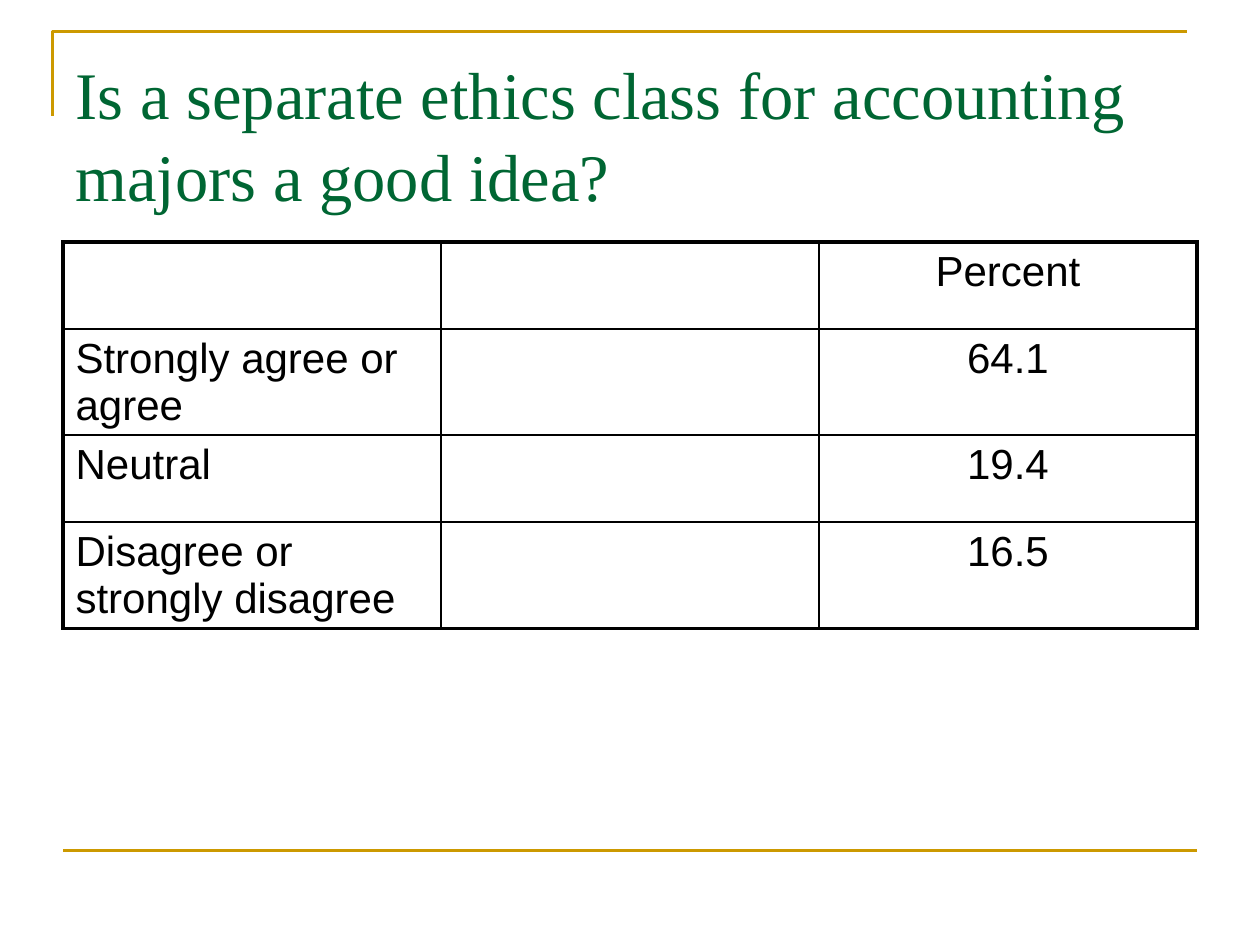
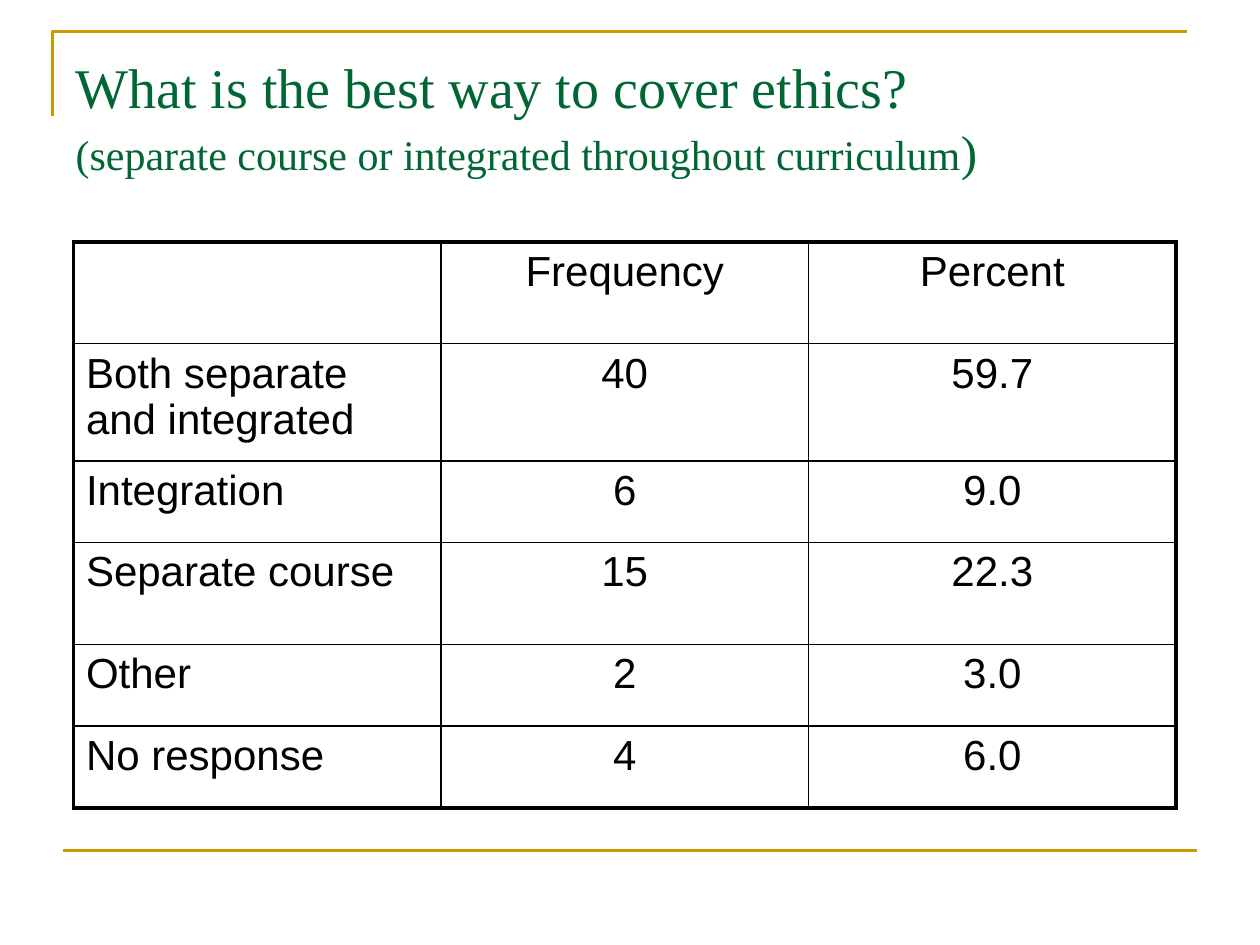
from dataclasses import dataclass

from lxml import etree
from pptx import Presentation
from pptx.dml.color import RGBColor
from pptx.enum.shapes import MSO_CONNECTOR
from pptx.enum.text import MSO_ANCHOR, MSO_AUTO_SIZE, PP_ALIGN
from pptx.oxml.ns import qn
from pptx.util import Cm, Pt

STRAIGHT = MSO_CONNECTOR.STRAIGHT
TOP = MSO_ANCHOR.TOP
NO_AUTOFIT = MSO_AUTO_SIZE.NONE
LEFT, CENTER = PP_ALIGN.LEFT, PP_ALIGN.CENTER
TITLE_ONLY = 5


@dataclass(frozen=True)
class Theme:
    title_color: RGBColor = RGBColor(0x00, 0x66, 0x33)
    rule_color: RGBColor = RGBColor(0xCC, 0x99, 0x00)
    text_color: RGBColor = RGBColor(0x00, 0x00, 0x00)
    border_color: str = "000000"
    title_font: str = "Times New Roman"
    body_font: str = "Arial"
    title_size: int = 38
    question_size: int = 32
    subtitle_size: int = 24
    bracket_size: int = 28
    body_size: int = 24
    rule_width: float = 1.5
    outer_border: float = 2.25
    inner_border: float = 1


THEME = Theme()


def add_span(para, text, font_name, size, color):
    span = para.add_run()
    span.text = text
    span.font.name = font_name
    span.font.size = Pt(size)
    span.font.color.rgb = color


def style_rule(line):
    line.color.rgb = THEME.rule_color
    line.width = Pt(THEME.rule_width)


def add_frame(page):
    """Draw the corner rule at the top and the footer rule."""
    builder = page.shapes.build_freeform(Cm(1.06), Cm(2.33))
    builder.add_line_segments(
        [(Cm(1.06), Cm(0.64)), (Cm(23.92), Cm(0.64))], close=False)
    corner = builder.convert_to_shape()
    corner.shadow.inherit = False
    corner.fill.background()
    style_rule(corner.line)

    footer = page.shapes.add_connector(
        STRAIGHT, Cm(1.27), Cm(17.15), Cm(24.13), Cm(17.15))
    etree.SubElement(footer._element.spPr, qn("a:effectLst"))
    style_rule(footer.line)


def add_title(page, lines):
    """Fill the title; each line is a list of (text, size) pairs."""
    title = page.shapes.title
    title.left, title.top = Cm(1.27), Cm(0.76)
    title.width, title.height = Cm(22.86), Cm(3.18)
    frame = title.text_frame
    frame.word_wrap = True
    frame.auto_size = NO_AUTOFIT
    frame.vertical_anchor = TOP
    frame.margin_top, frame.margin_bottom = Cm(0.25), Cm(0)
    para = frame.paragraphs[0]
    para.alignment = LEFT
    para.line_spacing = 1.03
    for index, spans in enumerate(lines):
        if index:
            para.add_line_break()
            line_break = para._p.findall(qn("a:br"))[-1]
            etree.SubElement(line_break, qn("a:rPr"), sz=str(spans[0][1] * 100))
        for text, size in spans:
            add_span(para, text, THEME.title_font, size, THEME.title_color)


def set_border(cell, side, width):
    line = etree.SubElement(
        cell._tc.get_or_add_tcPr(), qn(f"a:{side}"), w=str(Pt(width)))
    fill = etree.SubElement(line, qn("a:solidFill"))
    etree.SubElement(fill, qn("a:srgbClr"), val=THEME.border_color)


def add_grid(page, left, column_width, row_heights, rows):
    """Add a table with a heavy outline and thin inner lines."""
    last_row, last_col = len(rows) - 1, len(rows[0]) - 1
    table = page.shapes.add_table(
        len(rows), len(rows[0]), Cm(left), Cm(4.88),
        Cm(column_width * len(rows[0])), Cm(sum(row_heights))).table
    table.first_row = False
    table.horz_banding = False
    for column in table.columns:
        column.width = Cm(column_width)
    for r, (height, values) in enumerate(zip(row_heights, rows)):
        table.rows[r].height = Cm(height)
        for c, value in enumerate(values):
            cell = table.cell(r, c)
            outer_sides = {"lnL": c == 0, "lnR": c == last_col,
                           "lnT": r == 0, "lnB": r == last_row}
            for side, is_outer in outer_sides.items():
                set_border(cell, side,
                           THEME.outer_border if is_outer else THEME.inner_border)
            cell.fill.background()
            if value:
                para = cell.text_frame.paragraphs[0]
                para.alignment = CENTER if c else LEFT
                add_span(para, value, THEME.body_font, THEME.body_size,
                         THEME.text_color)


def add_page(deck, title_lines):
    page = deck.slides.add_slide(deck.slide_layouts[TITLE_ONLY])
    add_frame(page)
    add_title(page, title_lines)
    return page


def main():
    deck = Presentation()
    deck.slide_width, deck.slide_height = Cm(25.4), Cm(19.05)

    # Opinion on a separate class
    page = add_page(deck, [
        [("Is a separate ethics class for accounting majors a good idea?",
          THEME.title_size)],
    ])
    add_grid(page, 1.27, 7.62, [1.75, 2.14, 1.75, 2.14], [
        ("", "", "Percent"),
        ("Strongly agree or agree", "", "64.1"),
        ("Neutral", "", "19.4"),
        ("Disagree or strongly disagree", "", "16.5"),
    ])

    # Preferred way to cover ethics
    page = add_page(deck, [
        [("What is the best way to cover ethics?", THEME.question_size)],
        [("(separate course or integrated throughout curriculum",
          THEME.subtitle_size), (")", THEME.bracket_size)],
    ])
    add_grid(page, 1.48, 7.41, [2.05, 2.36, 1.65, 2.05, 1.65, 1.65], [
        ("", "Frequency", "Percent"),
        ("Both separate and integrated", "40", "59.7"),
        ("Integration", "6", "9.0"),
        ("Separate course", "15", "22.3"),
        ("Other", "2", "3.0"),
        ("No response", "4", "6.0"),
    ])

    deck.save("out.pptx")


if __name__ == "__main__":
    main()
